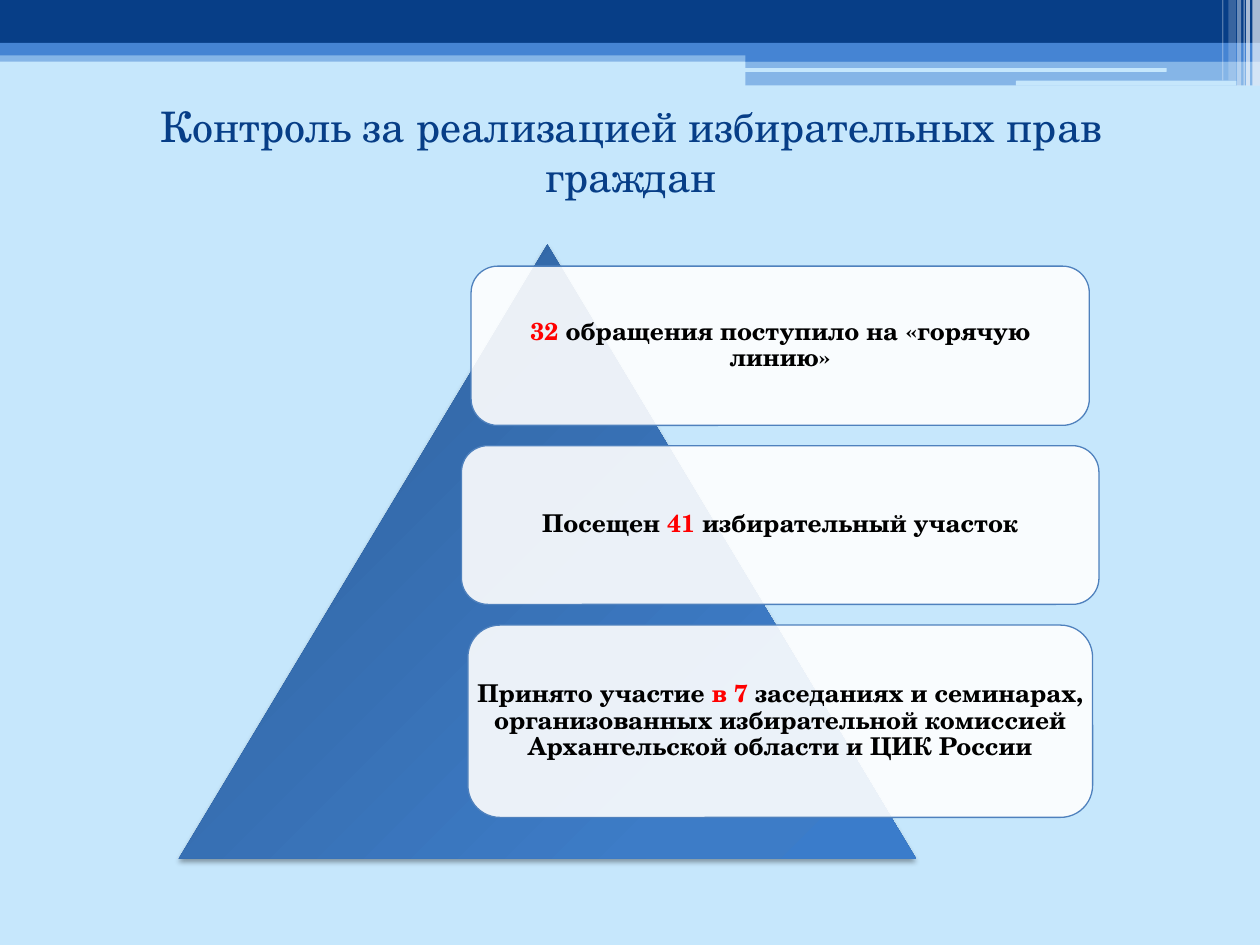
from lxml import etree
from pptx import Presentation
from pptx.dml.color import RGBColor
from pptx.enum import shapes, text
from pptx.oxml import parse_xml
from pptx.oxml.ns import qn
from pptx.util import Pt

NAVY = RGBColor(0x07, 0x3E, 0x87)
BLUE = RGBColor(0x45, 0x84, 0xD3)
SKY = RGBColor(0xC6, 0xE7, 0xFC)
OUTLINE = RGBColor(0x4F, 0x81, 0xBD)
WHITE = RGBColor(0xFF, 0xFF, 0xFF)
BLACK = RGBColor(0, 0, 0)
RED = RGBColor(0xFF, 0, 0)
PYRAMID_STOPS = [(0, RGBColor(0x2F, 0x5F, 0x99)),
                 (80, RGBColor(0x3D, 0x7C, 0xC7)),
                 (100, RGBColor(0x3A, 0x7C, 0xCB))]

FONT = "TeX Gyre Schola"
NS = 'xmlns:a="http://schemas.openxmlformats.org/drawingml/2006/main"'
RECT = shapes.MSO_SHAPE.RECTANGLE
ROUND = shapes.MSO_SHAPE.ROUNDED_RECTANGLE

# Header bars: kind, left, top, width, height, colour, opacity %
BARS = [
    (RECT, 0, 28.8, 720, 6.5, BLUE, 50),
    (RECT, 0, 0, 720, 24.5, NAVY, 100),
    (RECT, 0, 24.5, 720, 7.2, BLUE, 100),
    (RECT, 426, 28, 294, 7.2, BLUE, 100),
    (RECT, 426, 34.8, 294, 14, BLUE, 50),
    (ROUND, 425.5, 38.9, 241.2, 2.2, SKY, 100),
    (ROUND, 580.5, 46.1, 126, 2.9, SKY, 100),
]
# Stripes at the right edge: left, width, height, opacity %
STRIPES = [
    (715.7, 4.3, 49, 65), (712.1, 2.2, 49, 65), (710.6, 0.7, 49, 60),
    (707, 2.2, 49, 40), (702, 4.3, 46, 20), (698.4, 0.7, 46, 30),
]
# Cards: left, top, width, height, text parts
CARDS = [
    (269.2, 152.1, 353.3, 91, [
        ("32", RED), (" обращения поступило на «горячую линию»", BLACK)]),
    (263.7, 254.7, 364.3, 90.7, [
        ("Посещен ", BLACK), ("41", RED), (" избирательный участок", BLACK)]),
    (267.4, 357.2, 357, 109.9, [
        ("Принято участие ", BLACK), ("в 7 ", RED),
        ("заседаниях и семинарах, организованных избирательной комиссией "
         "Архангельской области и ЦИК России", BLACK)]),
]


def add_block(s, kind, left, top, width, height, color, opacity=100):
    sp = s.shapes.add_shape(kind, Pt(left), Pt(top), Pt(width), Pt(height))
    sp.shadow.inherit = False
    sp.line.fill.background()
    sp.fill.solid()
    sp.fill.fore_color.rgb = color
    if opacity < 100:
        clr = sp.fill._xPr.find(qn("a:solidFill"))[0]
        etree.SubElement(clr, qn("a:alpha"), val=str(opacity * 1000))
    return sp


def add_text(s, left, top, width, height, parts, size, bold=False,
             margin=7.2, spacing=1.0):
    box = s.shapes.add_textbox(Pt(left), Pt(top), Pt(width), Pt(height))
    tf = box.text_frame
    tf.word_wrap = True
    tf.vertical_anchor = text.MSO_ANCHOR.MIDDLE
    tf.margin_left = tf.margin_right = Pt(margin)
    tf.margin_top = tf.margin_bottom = Pt(margin / 2)
    p = tf.paragraphs[0]
    p.alignment = text.PP_ALIGN.CENTER
    p.line_spacing = spacing
    for words, color in parts:
        r = p.add_run()
        r.text = words
        r.font.name = FONT
        r.font.size = Pt(size)
        r.font.bold = bold
        r.font.color.rgb = color


def add_pyramid(s):
    sp = add_block(s, shapes.MSO_SHAPE.ISOSCELES_TRIANGLE,
                   102.2, 139.7, 421.2, 350.9, BLUE)
    pr = sp._element.spPr
    stops = "".join(f'<a:gs pos="{pos * 1000}"><a:srgbClr val="{color}"/></a:gs>'
                    for pos, color in PYRAMID_STOPS)
    pr.replace(pr.find(qn("a:solidFill")), parse_xml(
        f'<a:gradFill {NS} rotWithShape="1"><a:gsLst>{stops}</a:gsLst>'
        '<a:lin ang="2700000" scaled="0"/></a:gradFill>'))
    pr.find(qn("a:effectLst")).append(parse_xml(
        f'<a:outerShdw {NS} blurRad="{Pt(3.1)}" dist="{Pt(1.8)}" dir="5400000" '
        'rotWithShape="0"><a:srgbClr val="000000"><a:alpha val="35000"/>'
        '</a:srgbClr></a:outerShdw>'))


def add_card(s, left, top, width, height, parts):
    sp = add_block(s, ROUND, left, top, width, height, WHITE, 90)
    sp.line.color.rgb = OUTLINE
    sp.line.width = Pt(0.75)
    add_text(s, left, top, width, height, parts, 14, bold=True,
             margin=4.2, spacing=0.9)


def main():
    prs = Presentation()
    prs.slide_width, prs.slide_height = Pt(720), Pt(540)
    s = prs.slides.add_slide(prs.slide_layouts[6])
    s.background.fill.solid()
    s.background.fill.fore_color.rgb = SKY

    # Header decoration
    for bar in BARS:
        add_block(s, *bar)
    for left, width, height, opacity in STRIPES:
        add_block(s, RECT, left, 0, width, height, WHITE, opacity)

    # Title
    add_text(s, 36.7, 60.5, 648, 51.1,
             [("Контроль за реализацией избирательных прав граждан", NAVY)], 24)

    # Pyramid with its cards
    add_pyramid(s)
    for card in CARDS:
        add_card(s, *card)

    prs.save("out.pptx")


if __name__ == "__main__":
    main()
